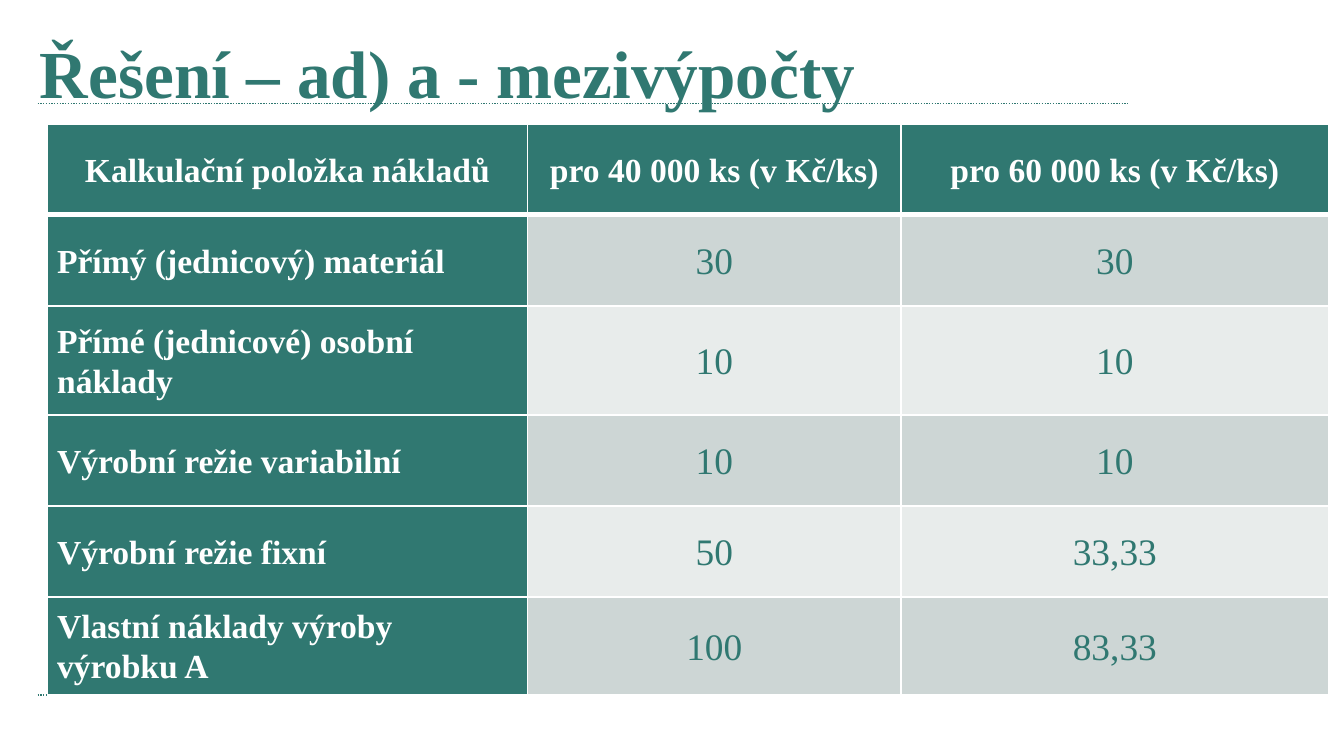
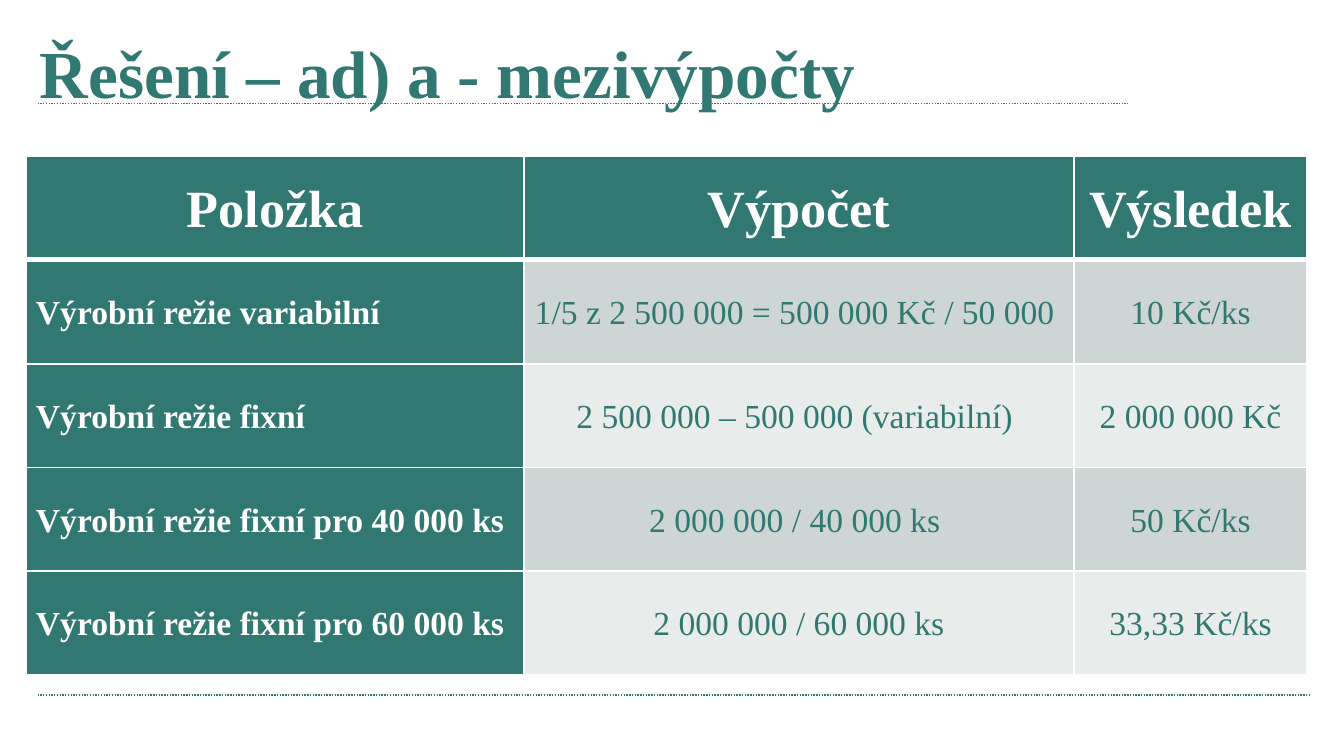
from lxml.etree import SubElement
from pptx import Presentation
from pptx.dml.color import RGBColor
from pptx.enum.dml import MSO_LINE
from pptx.enum.shapes import MSO_CONNECTOR
from pptx.enum.text import MSO_ANCHOR, MSO_AUTO_SIZE, PP_ALIGN
from pptx.oxml.ns import qn
from pptx.util import Cm, Pt

GREEN = RGBColor(0x30, 0x78, 0x71)
WHITE = RGBColor(0xFF, 0xFF, 0xFF)
BANDS = [RGBColor(0xCD, 0xD6, 0xD5), RGBColor(0xE8, 0xEC, 0xEB)]
FONT = "Times New Roman"
TITLE = "Řešení – ad) a - mezivýpočty"
RULES = [(1.96, 21.31), (13.13, 24.77)]  # height on the slide, right end

SLIDES = [
    {
        "left": 0.9, "top": 2.34,
        "cols": [9.07, 7.06, 8.08],
        "rows": [1.72, 1.72, 2.06, 1.72, 1.72, 1.85],
        "header_size": 18, "value_size": 20,
        "cells": [
            ["Kalkulační položka nákladů", "pro 40 000 ks (v Kč/ks)", "pro 60 000 ks (v Kč/ks)"],
            ["Přímý (jednicový) materiál", "30", "30"],
            ["Přímé (jednicové) osobní náklady", "10", "10"],
            ["Výrobní režie variabilní", "10", "10"],
            ["Výrobní režie fixní", "50", "33,33"],
            ["Vlastní náklady výroby výrobku A", "100", "83,33"],
        ],
    },
    {
        "left": 0.5, "top": 2.95,
        "cols": [9.4, 10.4, 4.4],
        "rows": [1.96] * 5,
        "header_size": 28, "value_size": 18,
        "cells": [
            ["Položka", "Výpočet", "Výsledek"],
            ["Výrobní režie variabilní", "1/5 z 2 500 000 = 500 000 Kč / 50 000 ", "10 Kč/ks"],
            ["Výrobní režie fixní", "2 500 000 – 500 000 (variabilní) ", "2 000 000 Kč"],
            ["Výrobní režie fixní pro 40 000 ks", "2 000 000 / 40 000 ks ", "50 Kč/ks"],
            ["Výrobní režie fixní pro 60 000 ks", "2 000 000 / 60 000 ks", "33,33 Kč/ks"],
        ],
    },
]


def set_format(obj, values):
    for name, value in values.items():
        setattr(obj, name, value)


def set_borders(cell, widths):
    tcPr = cell._tc.get_or_add_tcPr()
    for i, (side, width) in enumerate(widths.items()):
        ln = tcPr.makeelement(qn(f"a:{side}"), {"w": str(Pt(width))})
        fill = SubElement(ln, qn("a:solidFill"))
        SubElement(fill, qn("a:srgbClr"), val=str(WHITE))
        tcPr.insert(i, ln)


prs = Presentation()
prs.slide_width, prs.slide_height = Cm(25.4), Cm(14.28)

for spec_ in SLIDES:
    s = prs.slides.add_slide(prs.slide_layouts[5])

    # Dotted rules
    for y, right in RULES:
        line = s.shapes.add_connector(MSO_CONNECTOR.STRAIGHT, Cm(0.71), Cm(y), Cm(right), Cm(y))
        line.line.color.rgb = GREEN
        set_format(line.line, {"width": Pt(0.75), "dash_style": MSO_LINE.ROUND_DOT})
        SubElement(line._element.spPr, qn("a:effectLst"))

    # Title
    title = s.shapes.title
    set_format(title, {"left": Cm(0.5), "top": Cm(0.36), "width": Cm(22.4), "height": Cm(2)})
    tf = title.text_frame
    tf.text = TITLE
    set_format(tf, {"word_wrap": True, "auto_size": MSO_AUTO_SIZE.NONE,
                    "vertical_anchor": MSO_ANCHOR.MIDDLE})
    p = tf.paragraphs[0]
    p.alignment = PP_ALIGN.LEFT
    set_format(p.font, {"name": FONT, "size": Pt(36), "bold": True})
    p.font.color.rgb = GREEN

    # Table
    cols, rows = spec_["cols"], spec_["rows"]
    table = s.shapes.add_table(len(rows), len(cols), Cm(spec_["left"]), Cm(spec_["top"]),
                               Cm(sum(cols)), Cm(sum(rows))).table
    table.first_col = True
    for col, width in zip(table.columns, cols):
        col.width = Cm(width)
    for row, height in zip(table.rows, rows):
        row.height = Cm(height)

    for i, texts in enumerate(spec_["cells"]):
        for j, text in enumerate(texts):
            header, label = i == 0, j == 0
            strong = header or label
            cell = table.cell(i, j)
            set_format(cell, {"text": text, "vertical_anchor": MSO_ANCHOR.MIDDLE,
                              "margin_left": Cm(0.18), "margin_right": Cm(0.18),
                              "margin_top": 0, "margin_bottom": 0})
            cell.fill.solid()
            cell.fill.fore_color.rgb = GREEN if strong else BANDS[(i - 1) % 2]
            set_borders(cell, {"lnL": 1, "lnR": 1, "lnT": 3 if i == 1 else 1,
                               "lnB": 3 if header else 1})
            size = spec_["header_size"] if header else 18 if label else spec_["value_size"]
            p = cell.text_frame.paragraphs[0]
            set_format(p, {"line_spacing": 1.07,
                           "alignment": PP_ALIGN.LEFT if label and not header else PP_ALIGN.CENTER})
            r = p.runs[0]
            set_format(r.font, {"name": FONT, "size": Pt(size), "bold": strong})
            r.font.color.rgb = WHITE if strong else GREEN

prs.save("out.pptx")
